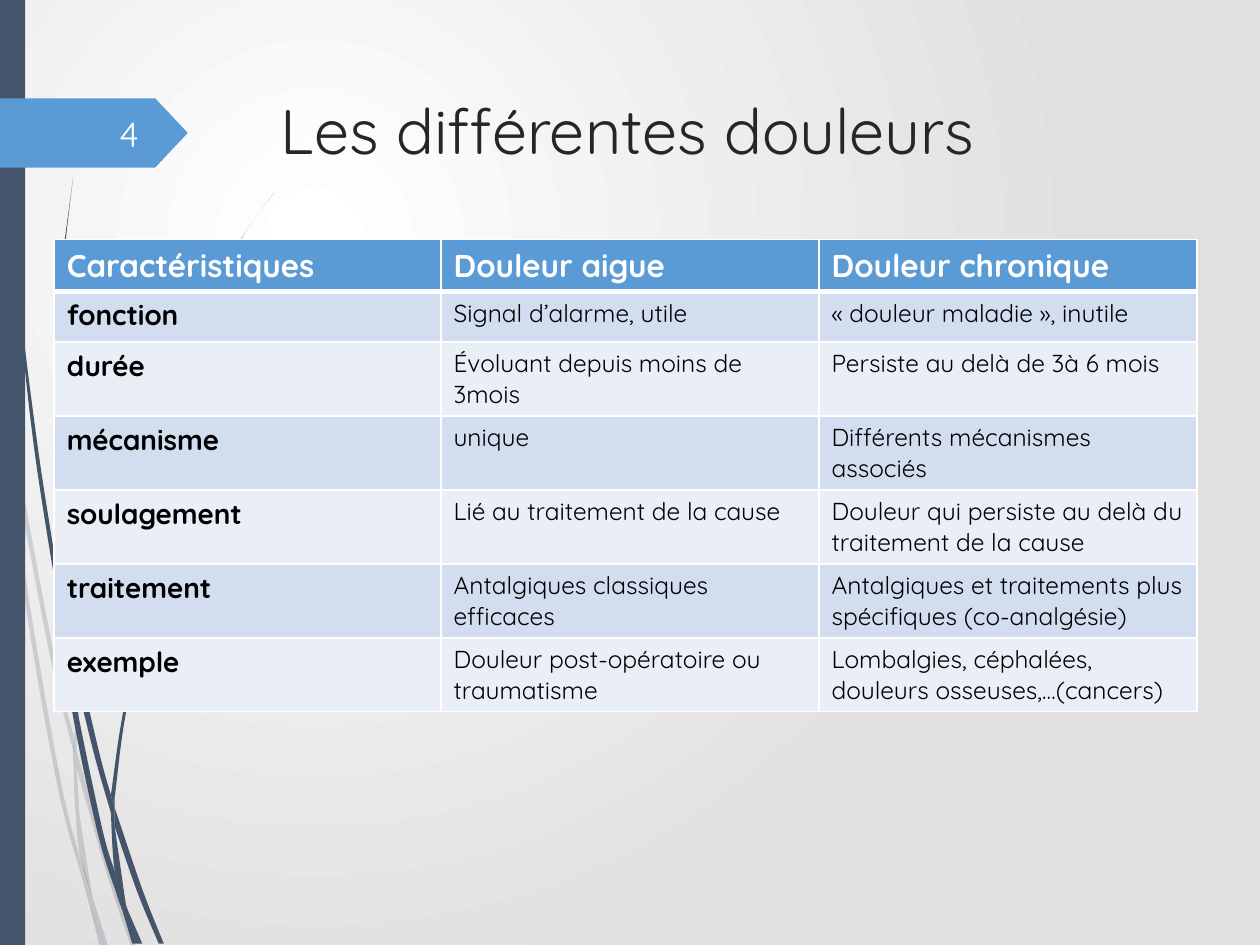
from dataclasses import astuple, dataclass

from lxml import etree
from pptx import Presentation
from pptx.dml.color import RGBColor
from pptx.enum.shapes import MSO_SHAPE
from pptx.enum.text import MSO_ANCHOR, MSO_AUTO_SIZE, PP_ALIGN
from pptx.oxml.ns import qn
from pptx.util import Inches, Pt

RECTANGLE, PENNANT = MSO_SHAPE.RECTANGLE, MSO_SHAPE.PENTAGON
TOP, MIDDLE = MSO_ANCHOR.TOP, MSO_ANCHOR.MIDDLE
LEFT, RIGHT = PP_ALIGN.LEFT, PP_ALIGN.RIGHT
NO_AUTOFIT = MSO_AUTO_SIZE.NONE

FONT = "Quicksand"
WHITE = RGBColor(0xFF, 0xFF, 0xFF)
BLACK = RGBColor(0, 0, 0)
PALE_GREY = RGBColor(0xE1, 0xDF, 0xDF)
NEAR_BLACK = RGBColor(0x26, 0x26, 0x26)
NUMBER_WHITE = RGBColor(0xFE, 0xFF, 0xFF)
SLATE = RGBColor(0x44, 0x54, 0x6A)
BLUE = RGBColor(0x5B, 0x9B, 0xD5)
BAND_DARK = RGBColor(0xD2, 0xDE, 0xEF)
BAND_LIGHT = RGBColor(0xEA, 0xEF, 0xF7)

TITLE_ONLY = 5
Point = tuple[float, float]


@dataclass(frozen=True)
class Wisp:
    """A blade of grass: smooth edges in inches, joined by straight lines."""
    edges: tuple[tuple[Point, ...], ...]


@dataclass(frozen=True)
class PainRow:
    trait: str
    acute: str
    chronic: str


FADED_WISPS = [
    Wisp((((0.08, 3.5), (0.06, 3.22), (0, 2.82)), ((0, 2.99), (0.07, 3.44)))),
    Wisp((((0.1, 3.45), (0.43, 5.2), (0.59, 5.86)),
          ((0.59, 5.99), (0.4, 5.22), (0.12, 3.76)))),
    Wisp((((0.61, 5.96), (0.88, 6.92), (1.08, 7.51)),
          ((1.04, 7.51), (0.85, 6.94), (0.61, 6.1)))),
    Wisp((((0.73, 7.11), (0.86, 7.51)), ((0.83, 7.51),))),
    Wisp((((0.08, 3.5), (0.19, 4.7), (0.45, 6.21), (0.64, 6.93), (0.7, 7.14)),
          ((0.64, 6.83), (0.48, 6.19), (0.22, 4.69), (0.12, 3.76)))),
    Wisp((((0.58, 5.99), (0.6, 6.46), (0.64, 6.83), (0.73, 7.11)),
          ((0.63, 6.46), (0.61, 6.1)))),
    Wisp((((0.61, 5.84), (0.76, 4.62), (1.11, 3.49), (1.59, 2.45),
           (1.87, 1.98), (2.01, 1.75), (2.17, 1.54)),
          ((2.17, 1.53), (2.01, 1.75), (1.86, 1.97), (1.58, 2.44),
           (1.1, 3.48), (0.75, 4.61), (0.59, 5.84)),
          ((0.61, 5.96),))),
    Wisp((((0.7, 7.14), (0.79, 7.51)), ((0.82, 7.51),))),
    Wisp((((0.59, 5.86), (0.58, 5.99), (0.61, 6.1)), ((0.61, 5.96),))),
    Wisp((((0.65, 6.83), (0.7, 7.14), (0.82, 7.51)), ((0.83, 7.51), (0.73, 7.11)))),
]

SOLID_WISPS = [
    Wisp((((0.02, 0), (0.03, 0.48), (0.05, 1.1), (0.14, 2.33), (0.27, 3.55),
           (0.46, 4.77)),
          ((0.47, 4.81), (0.45, 4.53), (0.3, 3.55), (0.15, 2.32), (0.06, 1.09),
           (0.04, 0.48), (0.03, 0)))),
    Wisp((((0.5, 4.72), (0.53, 5.05), (0.73, 5.92), (0.88, 6.45)),
          ((0.88, 6.31), (0.77, 5.9), (0.5, 4.72)))),
    Wisp((((0.91, 6.41), (1.13, 7.06), (1.3, 7.49)),
          ((1.26, 7.49), (1.09, 7.08), (0.91, 6.56)))),
    Wisp((((0.47, 4.77), (0.56, 5.57), (0.77, 6.59), (0.92, 7.08), (0.97, 7.22)),
          ((0.91, 6.91), (0.81, 6.57), (0.6, 5.56), (0.53, 5.05)))),
    Wisp((((0.5, 4.72), (0.48, 4.53), (0.44, 3.49), (0.48, 2.45), (0.52, 1.93),
           (0.58, 1.41)),
          ((0.51, 1.93), (0.47, 2.45), (0.43, 3.49), (0.45, 4.49)),
          ((0.49, 4.72),))),
    Wisp((((1, 7.19), (1.1, 7.49)), ((1.13, 7.49),))),
    Wisp((((0.45, 4.49), (0.47, 4.77), (0.53, 5.05)), ((0.5, 4.72),))),
    Wisp((((0.91, 6.33), (1.03, 5.52), (1.31, 4.76), (1.69, 4.06), (1.91, 3.74),
           (2.03, 3.59), (2.16, 3.44)),
          ((2.15, 3.44), (2.03, 3.58), (1.91, 3.73), (1.68, 4.05), (1.29, 4.74),
           (1.01, 5.51), (0.88, 6.31)),
          ((0.91, 6.41),))),
    Wisp((((0.97, 7.22), (1.05, 7.49)), ((1.08, 7.49),))),
    Wisp((((0.88, 6.45), (0.91, 6.91), (1, 7.19)), ((0.91, 6.56), (0.88, 6.45)))),
    Wisp((((0.88, 6.31), (0.88, 6.45), (0.91, 6.56)), ((0.91, 6.41),))),
    Wisp((((0.91, 6.91), (0.97, 7.22), (1.08, 7.49)), ((1.1, 7.49), (0.96, 7.06)))),
]

PAIN_ROWS = [
    PainRow("Caractéristiques", "Douleur aigue", "Douleur chronique"),
    PainRow("fonction", "Signal d’alarme, utile", "« douleur maladie », inutile"),
    PainRow("durée", "Évoluant depuis moins de 3mois", "Persiste au delà de 3à 6 mois"),
    PainRow("mécanisme", "unique", "Différents mécanismes associés"),
    PainRow("soulagement", "Lié au traitement de la cause",
            "Douleur qui persiste au delà du traitement de la cause"),
    PainRow("traitement", "Antalgiques classiques efficaces",
            "Antalgiques et traitements plus spécifiques (co-analgésie)"),
    PainRow("exemple", "Douleur post-opératoire ou traumatisme",
            "Lombalgies, céphalées, douleurs osseuses,…(cancers)"),
]


def paint(shape, color: RGBColor) -> None:
    shape.shadow.inherit = False
    shape.fill.solid()
    shape.fill.fore_color.rgb = color
    shape.line.fill.background()


def bend_edges(blade, wisp: Wisp) -> None:
    """Turn the lines within each edge into Catmull-Rom curves."""
    lines = iter(list(blade.element.iter(qn("a:lnTo"))))
    for number, edge in enumerate(wisp.edges):
        if number:
            next(lines)
        padded = (edge[0], *edge, edge[-1])
        for a, b, c, d in zip(padded, padded[1:], padded[2:], padded[3:]):
            line = next(lines)
            line.tag = qn("a:cubicBezTo")
            controls = ([q + (r - p) / 6 for p, q, r in zip(a, b, c)],
                        [r - (s - q) / 6 for q, r, s in zip(b, c, d)])
            for position, (x, y) in enumerate(controls):
                line.insert(position, etree.Element(
                    qn("a:pt"), x=str(Inches(x) - blade.left), y=str(Inches(y) - blade.top)))


def draw_wisp(shapes, wisp: Wisp, opacity: int = 100) -> None:
    outline = [(Inches(x), Inches(y)) for edge in wisp.edges for x, y in edge]
    builder = shapes.build_freeform(*outline[0])
    builder.add_line_segments(outline[1:], close=False)
    blade = builder.convert_to_shape()
    bend_edges(blade, wisp)
    etree.SubElement(next(blade.element.iter(qn("a:path"))), qn("a:close"))
    paint(blade, SLATE)
    if opacity < 100:
        color = blade.element.spPr.find(qn("a:solidFill"))[0]
        etree.SubElement(color, qn("a:alpha"), val=str(opacity * 1000))


def write(frame, text: str, size: int, color: RGBColor, bold=False, align=LEFT) -> None:
    frame.text = text
    paragraph = frame.paragraphs[0]
    paragraph.alignment = align
    font = paragraph.font
    font.name, font.size, font.bold, font.color.rgb = FONT, Pt(size), bold, color


def add_borders(cell_element, bottom_width: int) -> None:
    properties = cell_element.get_or_add_tcPr()
    widths = {"a:lnL": 1, "a:lnR": 1, "a:lnT": 1, "a:lnB": bottom_width}
    for position, (side, width) in enumerate(widths.items()):
        border = etree.Element(qn(side), w=str(Pt(width)))
        fill = etree.SubElement(border, qn("a:solidFill"))
        etree.SubElement(fill, qn("a:srgbClr"), val=str(WHITE))
        properties.insert(position, border)


def draw_pain_table(shapes) -> None:
    """Rows start at the least height and grow with their text."""
    frame = shapes.add_table(len(PAIN_ROWS), 3, Inches(0.43), Inches(1.9),
                             Inches(9.07), Inches(0.4 * len(PAIN_ROWS)))
    table = frame.table
    for column, width in zip(table.columns, (3.07, 3, 3)):
        column.width = Inches(width)
    for r, row in enumerate(PAIN_ROWS):
        header = r == 0
        band = BLUE if header else BAND_DARK if r % 2 else BAND_LIGHT
        for c, text in enumerate(astuple(row)):
            cell = table.cell(r, c)
            cell.fill.solid()
            cell.fill.fore_color.rgb = band
            size = 18 if header else 16 if c == 0 else 14
            write(cell.text_frame, text, size, WHITE if header else BLACK, header or c == 0)
    for i, cell_element in enumerate(frame.element.iter(qn("a:tc"))):
        add_borders(cell_element, bottom_width=3 if i < 3 else 1)


def fill_background(slide) -> None:
    fill = slide.background.fill
    fill.gradient()
    for stop, color, position in zip(fill.gradient_stops, (WHITE, PALE_GREY), (0, 1)):
        stop.color.rgb, stop.position = color, position
    gradient = next(slide.element.iter(qn("a:gradFill")))
    gradient.remove(gradient.find(qn("a:lin")))
    circle = etree.SubElement(gradient, qn("a:path"), path="circle")
    etree.SubElement(circle, qn("a:fillToRect"), l="50000", t="50000", r="100000", b="100000")


def main() -> None:
    presentation = Presentation()
    presentation.slide_width, presentation.slide_height = Inches(10), Inches(7.5)
    slide = presentation.slides.add_slide(presentation.slide_layouts[TITLE_ONLY])
    shapes = slide.shapes
    fill_background(slide)
    for wisp in FADED_WISPS:
        draw_wisp(shapes, wisp, opacity=20)
    for wisp in SOLID_WISPS:
        draw_wisp(shapes, wisp)
    paint(shapes.add_shape(RECTANGLE, 0, 0, Inches(0.2), Inches(7.5)), SLATE)
    pennant = shapes.add_shape(PENNANT, 0, Inches(0.78), Inches(1.49), Inches(0.55))
    pennant.adjustments[0] = 0.47
    paint(pennant, BLUE)

    title = shapes.title
    title.left, title.top = Inches(2.13), Inches(0.68)
    title.width, title.height = Inches(7.21), Inches(1.4)
    title.text_frame.auto_size = NO_AUTOFIT
    title.text_frame.vertical_anchor = TOP
    write(title.text_frame, "Les différentes douleurs", 36, NEAR_BLACK)
    draw_pain_table(shapes)
    number = shapes.add_textbox(Inches(0.56), Inches(0.86), Inches(0.64), Inches(0.4))
    number.text_frame.word_wrap = True
    number.text_frame.vertical_anchor = MIDDLE
    write(number.text_frame, "4", 20, NUMBER_WHITE, align=RIGHT)
    presentation.save("out.pptx")


if __name__ == "__main__":
    main()
